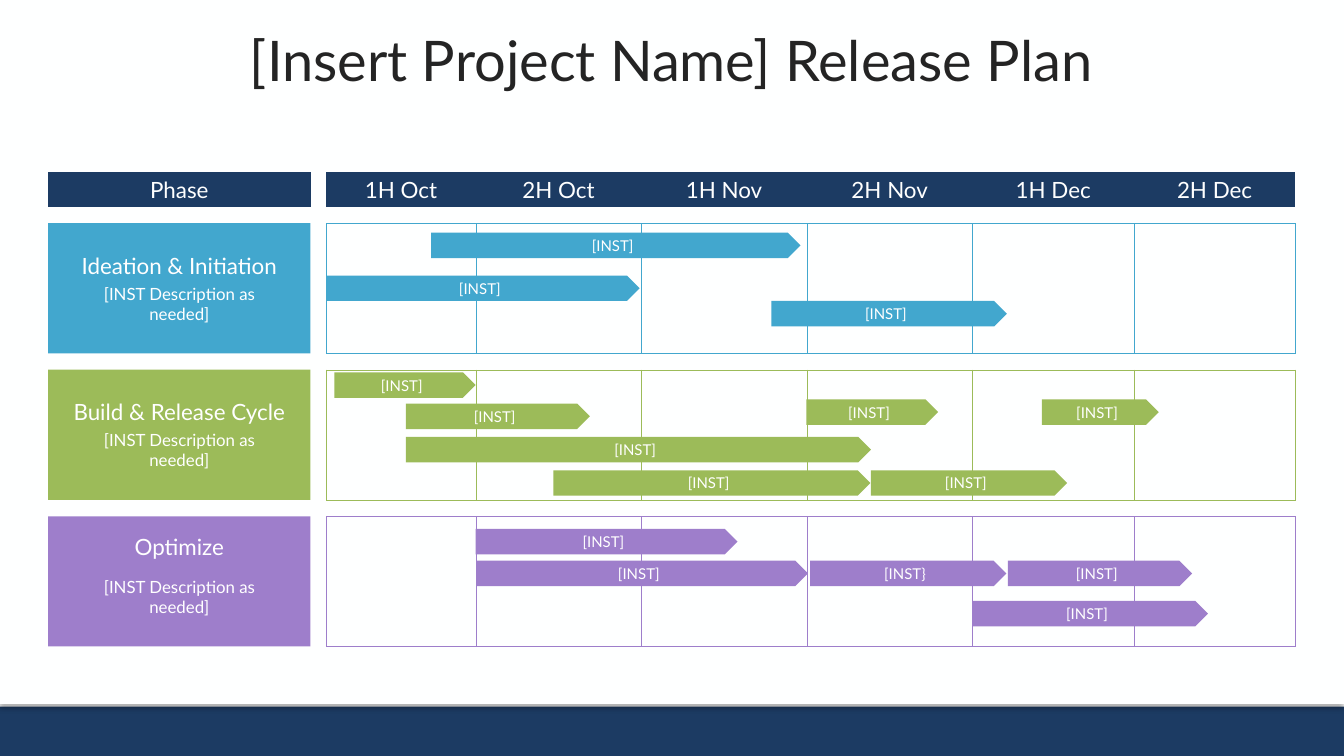
from lxml import etree
from pptx import Presentation
from pptx.dml.color import RGBColor
from pptx.enum.shapes import MSO_SHAPE
from pptx.enum.text import MSO_ANCHOR, MSO_AUTO_SIZE, PP_ALIGN
from pptx.oxml.ns import qn
from pptx.util import Cm, Pt

RECT, ARROW = MSO_SHAPE.RECTANGLE, MSO_SHAPE.PENTAGON
MIDDLE, CENTER, FIXED = MSO_ANCHOR.MIDDLE, PP_ALIGN.CENTER, MSO_AUTO_SIZE.NONE
NAVY = RGBColor(0x1C, 0x3B, 0x63)
PAPER = RGBColor(0xFE, 0xFF, 0xFF)
WHITE = RGBColor(0xFF, 0xFF, 0xFF)
INK = RGBColor(0x24, 0x24, 0x24)
BLUE = RGBColor(0x42, 0xA7, 0xCE)
GREEN = RGBColor(0x9C, 0xBB, 0x59)
PURPLE = RGBColor(0x9E, 0x7E, 0xCB)
FONT = "Lato"
PLAIN = "{2D5ABB26-0587-4C30-8999-92F81FD0307C}"

TITLE = "[Insert Project Name] Release Plan"
NOTE = "[INST Description as needed]"
MONTHS = ["1H Oct", "2H Oct", "1H Nov", "2H Nov", "1H Dec", "2H Dec"]
# Each bar: left edge, offset from the top of its lane, width, label
PHASES = [
    ("Ideation & Initiation", BLUE, 0.49, [
        (8.15, 0.18, 6.98, "[INST]"),
        (6.17, 0.99, 5.92, "[INST]"),
        (14.58, 1.47, 4.45, "[INST]"),
    ]),
    ("Build & Release Cycle", GREEN, 0.49, [
        (6.32, 0.05, 2.67, "[INST]"),
        (7.67, 0.64, 3.48, "[INST]"),
        (7.67, 1.27, 8.79, "[INST]"),
        (10.46, 1.9, 5.99, "[INST]"),
        (16.46, 1.9, 3.71, "[INST]"),
        (15.24, 0.56, 2.49, "[INST]"),
        (19.69, 0.56, 2.21, "[INST]"),
    ]),
    ("Optimize", PURPLE, 0.27, [
        (8.99, 0.24, 4.95, "[INST]"),
        (9.0, 0.84, 6.27, "[INST]"),
        (15.31, 0.84, 3.71, "[INST}"),
        (19.05, 0.84, 3.48, "[INST]"),
        (18.38, 1.6, 4.45, "[INST]"),
    ]),
]

WIDE, HIGH = 25.4, 14.29
SIDE, SIDE_W = 0.91, 4.96
GRID, COLS = 6.17, [2.82, 3.13, 3.13, 3.13, 3.05, 3.05]
HEAD, HEAD_H = 3.25, 0.66
LANE, LANE_H, STEP = 4.22, 2.46, 2.77
BAR_H = 0.48
NOTE_X, NOTE_Y, NOTE_W, NOTE_H = 0.46, 1.09, 4.04, 0.86
FOOT, PANEL_H = 13.36, 13.31


def text(frame, words, *, size, tint=WHITE, hold=None):
    hold = hold or frame
    hold.margin_left = hold.margin_right = Cm(0.1)
    hold.margin_top = hold.margin_bottom = Cm(0.05)
    hold.vertical_anchor = MIDDLE
    frame.word_wrap = True
    para = frame.paragraphs[0]
    para.alignment = CENTER
    run = para.add_run()
    run.text = words
    run.font.name, run.font.size = FONT, Pt(size)
    run.font.color.rgb = tint


def block(shapes, kind, x, y, w, h, tint):
    shape = shapes.add_shape(kind, Cm(x), Cm(y), Cm(w), Cm(h))
    shape.shadow.inherit = False
    shape.fill.solid()
    shape.fill.fore_color.rgb = tint
    shape.line.fill.background()
    return shape


def label(shapes, x, y, w, h, words, size):
    box = shapes.add_textbox(Cm(x), Cm(y), Cm(w), Cm(h))
    text(box.text_frame, words, size=size)


def border(cell, tint):
    for spot, side in enumerate(("lnL", "lnR", "lnT", "lnB")):
        line = etree.Element(qn("a:" + side), w=str(Pt(0.25)))
        fill = etree.SubElement(line, qn("a:solidFill"))
        etree.SubElement(fill, qn("a:srgbClr"), val=str(tint))
        cell.insert(spot, line)


def table(shapes, x, y, cols, h, words=None, edge=None):
    frame = shapes.add_table(1, len(cols), Cm(x), Cm(y), Cm(sum(cols)), Cm(h))
    grid = frame.table
    grid.first_row = grid.horz_banding = False
    next(frame.element.iter(qn("a:tableStyleId"))).text = PLAIN
    grid.rows[0].height = Cm(h)
    for i, w in enumerate(cols):
        grid.columns[i].width = Cm(w)
        cell = grid.cell(0, i)
        if words:
            cell.fill.solid()
            cell.fill.fore_color.rgb = NAVY
            text(cell.text_frame, words[i], size=12, tint=PAPER, hold=cell)
        else:
            cell.fill.background()
    if edge:
        for cell in frame.element.iter(qn("a:tcPr")):
            border(cell, edge)


def shade(shape):
    effect = next(shape.element.iter(qn("a:effectLst")))
    drop = etree.SubElement(effect, qn("a:outerShdw"), blurRad=str(Pt(3.1)),
                            dist=str(Pt(1.8)), dir="5400000", rotWithShape="0")
    color = etree.SubElement(drop, qn("a:srgbClr"), val="000000")
    etree.SubElement(color, qn("a:alpha"), val="35000")


def main():
    deck = Presentation()
    deck.slide_width, deck.slide_height = Cm(WIDE), Cm(HIGH)
    slide = deck.slides.add_slide(deck.slide_layouts[5])
    slide.background.fill.solid()
    slide.background.fill.fore_color.rgb = PAPER
    shapes = slide.shapes

    title = shapes.title
    title.left, title.top = Cm(2.82), Cm(0.36)
    title.width, title.height = Cm(19.74), Cm(1.5)
    title.text_frame.auto_size = FIXED
    text(title.text_frame, TITLE, size=30, tint=INK)

    foot = block(shapes, RECT, 0, FOOT, WIDE, HIGH - FOOT, NAVY)
    panel = block(shapes, RECT, 0, 0, WIDE, PANEL_H, PAPER)
    shade(panel)
    for shape in (foot, panel):
        title.element.addprevious(shape.element)

    table(shapes, SIDE, HEAD, [SIDE_W], HEAD_H, words=["Phase"])
    table(shapes, GRID, HEAD, COLS, HEAD_H, words=MONTHS)

    for i, (name, tint, drop, bars) in enumerate(PHASES):
        top = LANE + i * STEP
        table(shapes, GRID, top, COLS, LANE_H, edge=tint)
        group = shapes.add_group_shape().shapes
        block(group, RECT, SIDE, top, SIDE_W, LANE_H, tint)
        label(group, SIDE, top + drop, SIDE_W, 0.61, name, 12)
        label(group, SIDE + NOTE_X, top + NOTE_Y, NOTE_W, NOTE_H, NOTE, 9)
        for x, y, w, words in bars:
            bar = block(shapes, ARROW, x, top + y, w, BAR_H, tint)
            text(bar.text_frame, words, size=8)

    deck.save("out.pptx")


if __name__ == "__main__":
    main()
